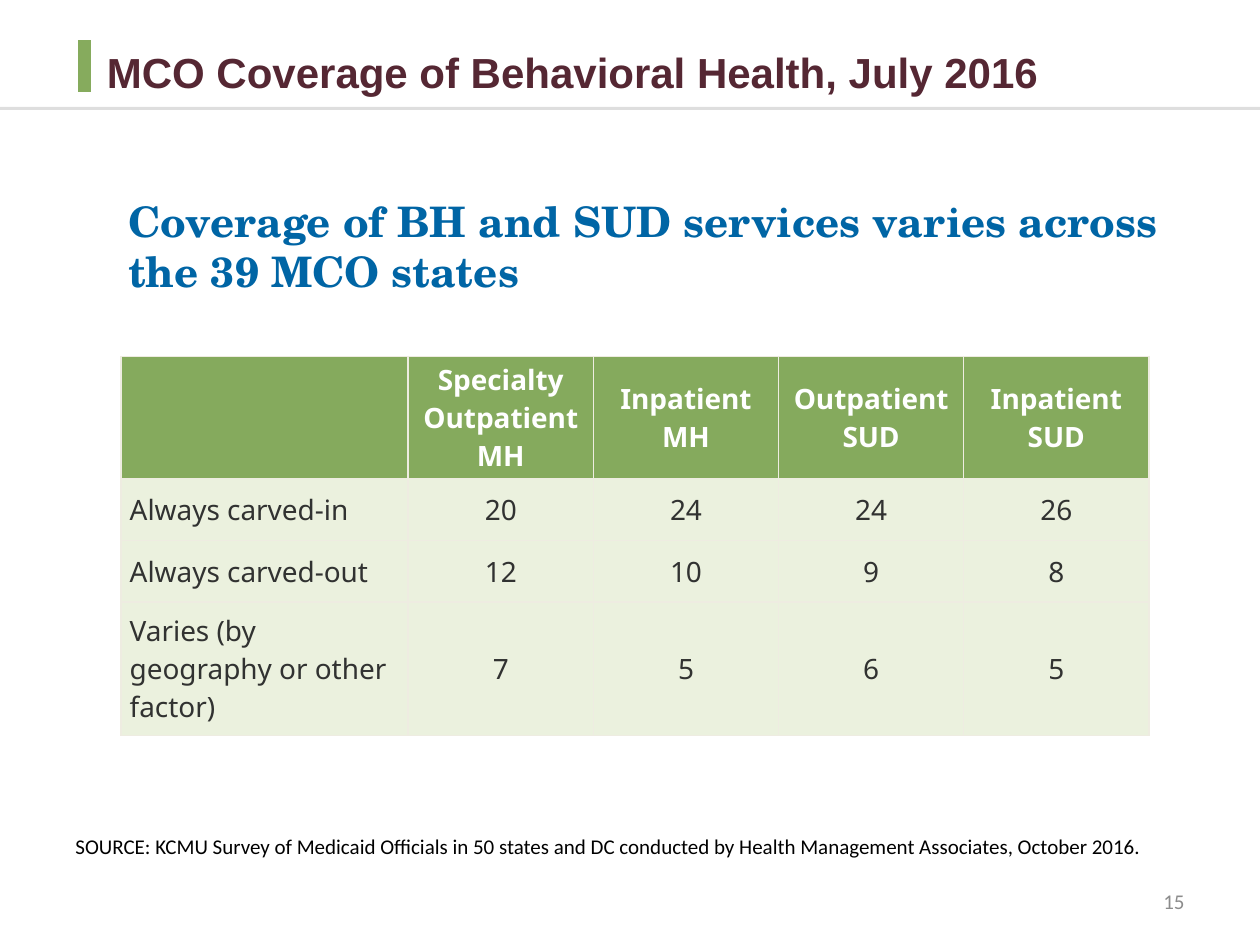
import lxml.etree
import pptx
import pptx.dml.color
import pptx.enum.shapes
import pptx.enum.text
import pptx.oxml.ns
import pptx.util

Inches = pptx.util.Inches
Align = pptx.enum.text.PP_ALIGN
Anchor = pptx.enum.text.MSO_ANCHOR

COLORS = {
    "title": "552733",
    "accent": "86AB5D",
    "rule": "000000",
    "headline": "0065A5",
    "header": "85AA5D",
    "body": "EBF1DE",
    "border": "EEECE1",
    "header_text": "FFFFFF",
    "body_text": "313231",
    "source": "000000",
    "number": "8C8C8C",
}
COVERAGE = [
    ["", "Specialty Outpatient MH", "Inpatient MH", "Outpatient SUD", "Inpatient SUD"],
    ["Always carved-in", "20", "24", "24", "26"],
    ["Always carved-out", "12", "10", "9", "8"],
    ["Varies (by geography or other factor)", "7", "5", "6", "5"],
]


def rgb(name):
    return pptx.dml.color.RGBColor.from_string(COLORS[name])


def write(frame, text, *, font, size, color, bold=False, align=Align.LEFT):
    frame.word_wrap = True
    paragraph = frame.paragraphs[0]
    paragraph.alignment = align
    paragraph.font.size = pptx.util.Pt(size)
    if not text:
        return
    run = paragraph.add_run()
    run.text = text
    run.font.name = font
    run.font.size = pptx.util.Pt(size)
    run.font.bold = bold
    run.font.color.rgb = rgb(color)


def add_element(parent, tag, **attributes):
    return lxml.etree.SubElement(parent, pptx.oxml.ns.qn(tag), **attributes)


class SlideBuilder:
    table_font = "Noto Sans"
    table_size = 16
    border_width = 1

    def __init__(self, slide):
        self.slide = slide

    def text(self, left, top, width, height, text, anchor=Anchor.TOP, **style):
        box = self.slide.shapes.add_textbox(
            Inches(left), Inches(top), Inches(width), Inches(height)
        )
        box.text_frame.vertical_anchor = anchor
        write(box.text_frame, text, **style)

    def line(self, x1, y1, x2, y2, color, width, opacity=100):
        line = self.slide.shapes.add_connector(
            pptx.enum.shapes.MSO_CONNECTOR.STRAIGHT,
            Inches(x1), Inches(y1), Inches(x2), Inches(y2),
        )
        line.line.color.rgb = rgb(color)
        line.line.width = pptx.util.Pt(width)
        properties = line._element.spPr
        if opacity < 100:
            fill_color = properties.find(".//" + pptx.oxml.ns.qn("a:srgbClr"))
            add_element(fill_color, "a:alpha", val=str(opacity * 1000))
        add_element(properties, "a:effectLst")

    def cell_borders(self, cell):
        properties = cell._tc.get_or_add_tcPr()
        for side in ("a:lnL", "a:lnR", "a:lnT", "a:lnB"):
            border = add_element(properties, side, w=str(pptx.util.Pt(self.border_width)))
            fill = add_element(border, "a:solidFill")
            add_element(fill, "a:srgbClr", val=COLORS["border"])

    def table(self, left, top, widths, heights, rows):
        table = self.slide.shapes.add_table(
            len(rows), len(widths), Inches(left), Inches(top),
            Inches(sum(widths)), Inches(sum(heights)),
        ).table
        for column, width in zip(table.columns, widths):
            column.width = Inches(width)
        for row, height in zip(table.rows, heights):
            row.height = Inches(height)
        for r, values in enumerate(rows):
            part = "header" if r == 0 else "body"
            for c, value in enumerate(values):
                cell = table.cell(r, c)
                cell.vertical_anchor = Anchor.MIDDLE
                cell.margin_left = cell.margin_right = Inches(0.07)
                cell.margin_top = cell.margin_bottom = 0
                self.cell_borders(cell)
                cell.fill.solid()
                cell.fill.fore_color.rgb = rgb(part)
                write(
                    cell.text_frame, value, font=self.table_font, size=self.table_size,
                    color=part + "_text", bold=r == 0,
                    align=Align.CENTER if c else Align.LEFT,
                )


def main():
    deck = pptx.Presentation()
    deck.slide_width, deck.slide_height = Inches(10), Inches(7.5)
    builder = SlideBuilder(deck.slides.add_slide(deck.slide_layouts[6]))

    builder.text(7.17, 6.95, 2.33, 0.4, "15", anchor=Anchor.MIDDLE,
                 font="Calibri", size=12, color="number", align=Align.RIGHT)
    builder.table(0.96, 2.83, [2.28] + [1.47] * 4, [0.97, 0.49, 0.49, 1.06], COVERAGE)
    builder.text(0.75, 0.32, 7.67, 0.5, "MCO Coverage of Behavioral Health, July 2016",
                 font="Arial", size=24, color="title", bold=True)
    builder.line(0.67, 0.32, 0.67, 0.73, "accent", 7)
    builder.line(-0.14, 0.86, 10.21, 0.86, "rule", 1.75, opacity=12)
    builder.text(0.92, 1.5, 8.42, 0.91,
                 "Coverage of BH and SUD services varies across the 39 MCO states",
                 font="TeX Gyre Schola", size=24, color="headline", bold=True)
    builder.text(0.5, 6.57, 8.92, 0.3,
                 "SOURCE: KCMU Survey of Medicaid Officials in 50 states and DC conducted by "
                 "Health Management Associates, October 2016.",
                 font="Calibri", size=12, color="source")
    deck.save("out.pptx")


if __name__ == "__main__":
    main()
